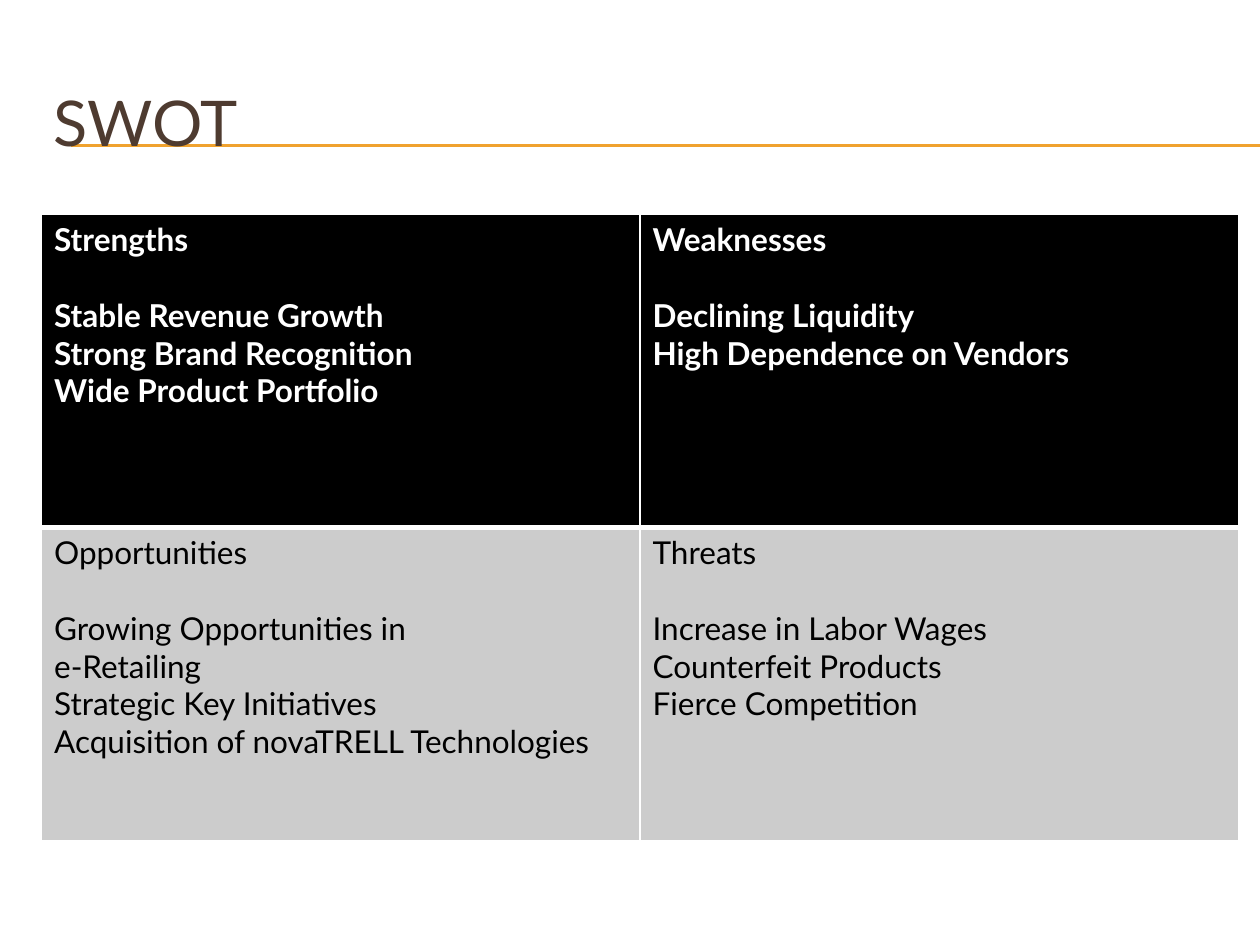
from dataclasses import dataclass

from lxml.etree import SubElement
from pptx import Presentation
from pptx.dml.color import RGBColor
from pptx.enum.shapes import MSO_CONNECTOR
from pptx.enum.text import MSO_ANCHOR
from pptx.oxml.ns import qn
from pptx.slide import Slide
from pptx.table import _Cell
from pptx.text.text import TextFrame
from pptx.util import Inches, Pt

FONT = "Lato"
WHITE = "FFFFFF"
BLACK = "000000"
MARGIN, CONTENT_WIDTH = 0.33, 9.5


@dataclass(frozen=True)
class Quadrant:
    heading: str
    points: tuple[str, ...]


@dataclass(frozen=True)
class RowStyle:
    fill: str
    color: str
    bold: bool
    top: float
    bottom: float


QUADRANTS = (
    (
        Quadrant("Strengths", ("Stable Revenue Growth", "Strong Brand Recognition",
                               "Wide Product Portfolio")),
        Quadrant("Weaknesses", ("Declining Liquidity", "High Dependence on Vendors")),
    ),
    (
        Quadrant("Opportunities", ("Growing Opportunities in", "e-Retailing",
                                   "Strategic Key Initiatives",
                                   "Acquisition of novaTRELL Technologies")),
        Quadrant("Threats", ("Increase in Labor Wages", "Counterfeit Products",
                             "Fierce Competition")),
    ),
)
ROW_STYLES = (
    RowStyle(BLACK, WHITE, True, top=1, bottom=3),
    RowStyle("CCCCCC", BLACK, False, top=3, bottom=1),
)


def rgb(value: str) -> RGBColor:
    return RGBColor.from_string(value)


def write_lines(frame: TextFrame, lines: tuple[str, ...], *, size: float, color: str,
                bold: bool = False, first_gap: float = 0) -> None:
    """Write one paragraph per line, with first_gap points after the first."""
    for index, line in enumerate(lines):
        paragraph = frame.add_paragraph() if index else frame.paragraphs[0]
        paragraph.space_after = Pt(0 if index else first_gap)
        run = paragraph.add_run()
        run.text = line
        run.font.name = FONT
        run.font.size = Pt(size)
        run.font.bold = bold
        run.font.color.rgb = rgb(color)


def add_rule(slide: Slide, y: float) -> None:
    rule = slide.shapes.add_connector(
        MSO_CONNECTOR.STRAIGHT, Inches(0.56), Inches(y), Inches(10), Inches(y))
    rule.line.color.rgb = rgb("F0A22E")
    rule.line.width = Pt(0.75)
    SubElement(rule._element.spPr, qn("a:effectLst"))


def add_title(slide: Slide, title: str) -> None:
    box = slide.shapes.add_textbox(
        Inches(MARGIN), Inches(0.5), Inches(CONTENT_WIDTH), Inches(0.92))
    box.text_frame.word_wrap = True
    box.text_frame.vertical_anchor = MSO_ANCHOR.MIDDLE
    write_lines(box.text_frame, (title,), size=36, color="4E3B30")


def set_borders(cell: _Cell, top: float, bottom: float) -> None:
    properties = cell._tc.get_or_add_tcPr()
    for side, width in (("L", 1), ("R", 1), ("T", top), ("B", bottom)):
        border = SubElement(properties, qn(f"a:ln{side}"), w=str(Pt(width)))
        solid = SubElement(border, qn("a:solidFill"))
        SubElement(solid, qn("a:srgbClr"), val=WHITE)


def fill_quadrant(cell: _Cell, quadrant: Quadrant, style: RowStyle) -> None:
    set_borders(cell, style.top, style.bottom)
    cell.fill.solid()
    cell.fill.fore_color.rgb = rgb(style.fill)
    write_lines(cell.text_frame, (quadrant.heading, *quadrant.points), size=18,
                color=style.color, bold=style.bold, first_gap=21.6)


def add_swot_table(slide: Slide) -> None:
    table = slide.shapes.add_table(
        len(QUADRANTS), len(QUADRANTS[0]), Inches(MARGIN), Inches(1.7),
        Inches(CONTENT_WIDTH), Inches(4.97)).table
    for row, (quadrants, style) in enumerate(zip(QUADRANTS, ROW_STYLES)):
        for column, quadrant in enumerate(quadrants):
            fill_quadrant(table.cell(row, column), quadrant, style)


def main() -> None:
    presentation = Presentation()
    presentation.slide_width = Inches(10)
    presentation.slide_height = Inches(7.5)
    slide = presentation.slides.add_slide(presentation.slide_layouts[6])
    for y in (1.15, 1.16):
        add_rule(slide, y)
    add_title(slide, "SWOT")
    add_swot_table(slide)
    presentation.save("out.pptx")


if __name__ == "__main__":
    main()
